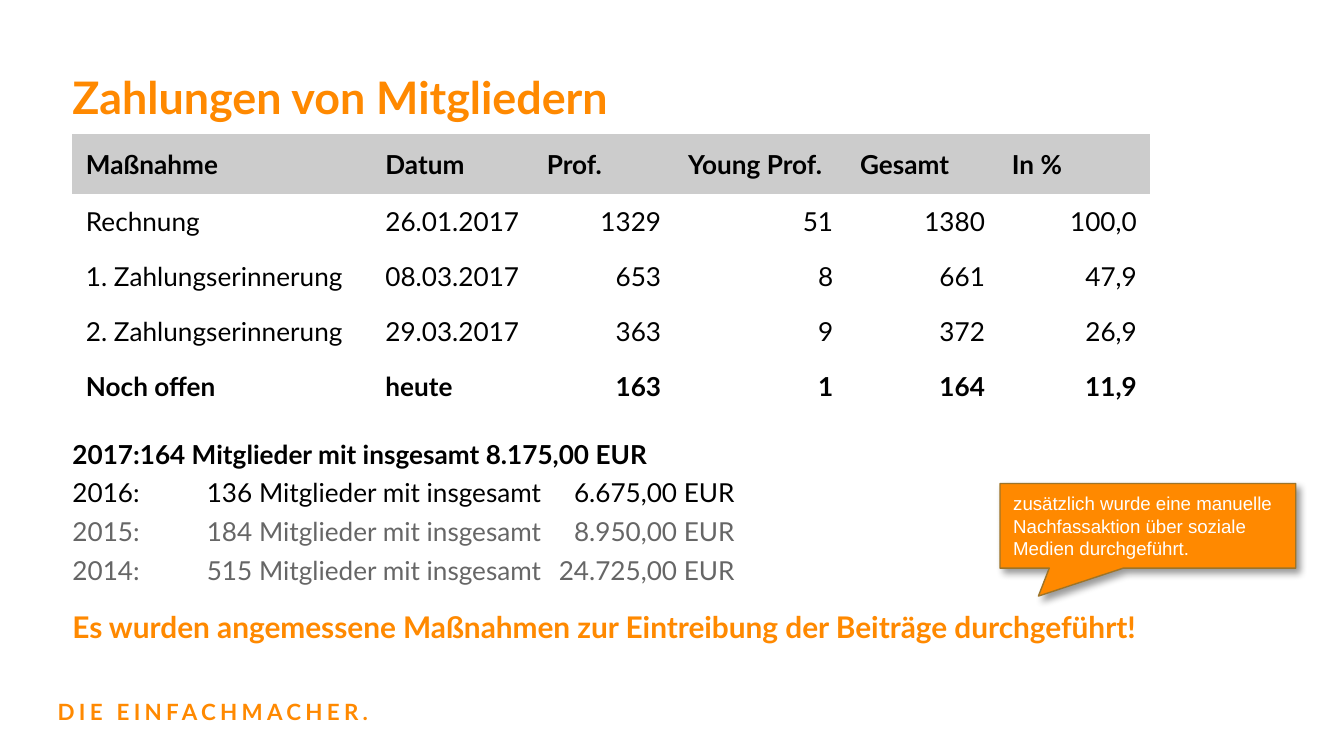
import pptx
import pptx.util
import pptx.dml.color
import pptx.enum.shapes
import pptx.enum.text
import pptx.oxml
import pptx.oxml.ns

Cm, Pt = pptx.util.Cm, pptx.util.Pt
ALIGN = pptx.enum.text.PP_ALIGN
ANCHOR = pptx.enum.text.MSO_ANCHOR

COLORS = {"orange": "FF8900", "black": "000000", "gray": "666666",
          "header": "CCCCCC", "white": "FFFFFF", "edge": "9D7429"}

# Content
TITLE = "Zahlungen von Mitgliedern"
FOOTER = "DIE EINFACHMACHER."
CALLOUT = ("zusätzlich wurde eine manuelle Nachfassaktion über soziale "
           "Medien durchgeführt.")
PAYMENTS = [
    ("Maßnahme", "Datum", "Prof.", "Young Prof.", "Gesamt", "In %"),
    ("Rechnung", "26.01.2017", "1329", "51", "1380", "100,0"),
    ("1. Zahlungserinnerung", "08.03.2017", "653", "8", "661", "47,9"),
    ("2. Zahlungserinnerung", "29.03.2017", "363", "9", "372", "26,9"),
    ("Noch offen", "heute", "163", "1", "164", "11,9"),
]
COLUMN_WIDTHS = [5.66, 3.05, 2.67, 3.25, 2.87, 2.87]
ROW_HEIGHTS = [1.12] + [1.04] * 4
# text, size, colour, bold, space before
SUMMARY = [
    ("2017:164 Mitglieder mit insgesamt 8.175,00 EUR", 14, "black", True, 0),
    ("2016:\t136 Mitglieder mit insgesamt\t6.675,00 EUR", 14, "black", False, 4),
    ("2015:\t184 Mitglieder mit insgesamt\t8.950,00 EUR", 14, "gray", False, 4),
    ("2014:\t515 Mitglieder mit insgesamt\t24.725,00 EUR", 14, "gray", False, 4),
    ("Es wurden angemessene Maßnahmen zur Eintreibung der Beiträge "
     "durchgeführt!", 16, "orange", True, 12),
]
SUMMARY_TABS = [(2.54, "l"), (12.52, "r")]
NO_STYLE = "{2D5ABB26-0587-4C30-8999-92F81FD0307C}"


def rgb(name):
    return pptx.dml.color.RGBColor.from_string(COLORS[name])


def add_run(p, text, size, color, bold=False, font="Lato"):
    r = p.add_run()
    r.text = text
    r.font.name, r.font.size, r.font.bold = font, Pt(size), bold
    r.font.color.rgb = rgb(color)
    return r


def setup_frame(tf, anchor=ANCHOR.TOP, vertical=0.25):
    tf.word_wrap = True
    tf.auto_size = pptx.enum.text.MSO_AUTO_SIZE.NONE
    tf.vertical_anchor = anchor
    tf.margin_left = tf.margin_right = Cm(0.25)
    tf.margin_top = tf.margin_bottom = Cm(vertical)


def add_tabs(p, tabs):
    tab_list = pptx.oxml.parse_xml(
        f'<a:tabLst {pptx.oxml.ns.nsdecls("a")}>'
        + "".join(f'<a:tab pos="{Cm(pos)}" algn="{algn}"/>' for pos, algn in tabs)
        + "</a:tabLst>")
    p._p.get_or_add_pPr().append(tab_list)


def add_title(s):
    sp = s.shapes.title
    sp.left, sp.top, sp.width, sp.height = Cm(1.12), Cm(0.91), Cm(23.37), Cm(1.63)
    setup_frame(sp.text_frame)
    p = sp.text_frame.paragraphs[0]
    p.alignment, p.line_spacing = ALIGN.LEFT, 1.15
    add_run(p, TITLE, 24, "orange", True)


def add_payments(s):
    frame = s.shapes.add_table(len(PAYMENTS), len(COLUMN_WIDTHS), Cm(1.37), Cm(2.54),
                               Cm(sum(COLUMN_WIDTHS)), Cm(sum(ROW_HEIGHTS)))
    table = frame.table
    table.first_row = table.horz_banding = False
    table._tbl.tblPr.find(pptx.oxml.ns.qn("a:tableStyleId")).text = NO_STYLE
    for column, width in zip(table.columns, COLUMN_WIDTHS):
        column.width = Cm(width)
    for i, values in enumerate(PAYMENTS):
        table.rows[i].height = Cm(ROW_HEIGHTS[i])
        header = i == 0
        for j, value in enumerate(values):
            cell = table.cell(i, j)
            cell.vertical_anchor = ANCHOR.MIDDLE
            if header:
                cell.fill.solid()
                cell.fill.fore_color.rgb = rgb("header")
            else:
                cell.fill.background()
            p = cell.text_frame.paragraphs[0]
            p.alignment = ALIGN.RIGHT if j >= 2 and not header else ALIGN.LEFT
            add_run(p, value, 14, "black", header or i == len(PAYMENTS) - 1)


def add_summary(s):
    tf = s.shapes.add_textbox(Cm(1.12), Cm(8.03), Cm(23.37), Cm(4.39)).text_frame
    setup_frame(tf)
    for i, (text, size, color, bold, before) in enumerate(SUMMARY):
        p = tf.add_paragraph() if i else tf.paragraphs[0]
        if before:
            p.space_before = Pt(before)
        if "\t" in text:
            add_tabs(p, SUMMARY_TABS)
        add_run(p, text, size, color, bold)


def add_callout(s):
    sp = s.shapes.add_shape(pptx.enum.shapes.MSO_SHAPE.RECTANGULAR_CALLOUT,
                            Cm(18.9), Cm(9.14), Cm(5.59), Cm(1.6))
    sp.adjustments[0], sp.adjustments[1] = -0.37, 0.83
    sp.fill.solid()
    sp.fill.fore_color.rgb = rgb("orange")
    sp.line.color.rgb = rgb("edge")
    sp.line.width = Pt(0.75)
    # Soft shadow to the lower right
    sp.shadow.inherit = False
    sp._element.spPr.find(pptx.oxml.ns.qn("a:effectLst")).append(pptx.oxml.parse_xml(
        f'<a:outerShdw {pptx.oxml.ns.nsdecls("a")} blurRad="{Pt(4)}" dist="{Pt(3)}" '
        f'dir="2700000" algn="tl" rotWithShape="0"><a:srgbClr val="{COLORS["black"]}">'
        '<a:alpha val="40000"/></a:srgbClr></a:outerShdw>'))
    setup_frame(sp.text_frame, ANCHOR.MIDDLE, 0.13)
    p = sp.text_frame.paragraphs[0]
    p.alignment = ALIGN.LEFT
    add_run(p, CALLOUT, 10, "white", font="Arial")


def add_footer(s):
    tf = s.shapes.add_textbox(Cm(0.84), Cm(12.95), Cm(7.87), Cm(1.04)).text_frame
    setup_frame(tf)
    r = add_run(tf.paragraphs[0], FOOTER, 12, "orange", True)
    r.font._element.set("spc", "230")  # wide letter spacing


def main():
    prs = pptx.Presentation()
    prs.slide_width, prs.slide_height = Cm(25.4), Cm(14.29)
    s = prs.slides.add_slide(prs.slide_layouts[5])
    add_footer(s)
    add_title(s)
    add_summary(s)
    add_payments(s)
    add_callout(s)
    prs.save("out.pptx")


if __name__ == "__main__":
    main()
